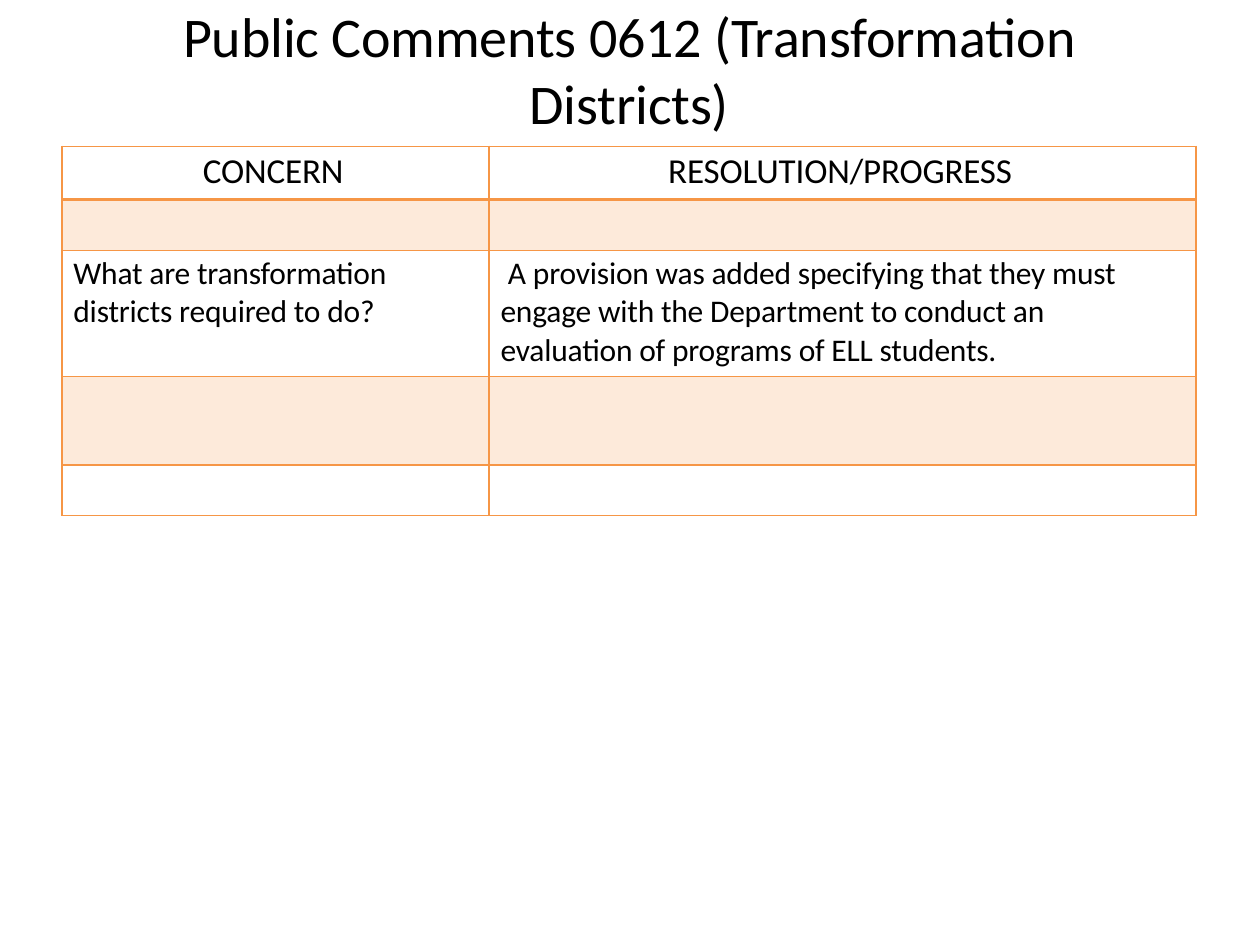
from lxml import etree
from pptx import Presentation
from pptx import util as u
from pptx.dml.color import RGBColor
from pptx.enum import text
from pptx.oxml import ns

HUES = {"ink": "000000", "line": "F69646", "band": "FDEADA"}
COLS = [8.61, 14.25]
ROWS = [1.08, 1.02, 2.54, 1.78, 1.02]
BANDS = {1, 3}
HEAD = {"size": 20, "before": 1.8}
BODY = {"size": 18, "before": 1.9}
CELLS = {
    (0, 0): ("CONCERN", 2.84, 0, HEAD),
    (0, 1): ("RESOLUTION/PROGRESS", 3.61, 0, HEAD),
    (2, 0): ("What are transformation districts required to do?", 0.23, 0, BODY),
    (2, 1): (
        "A provision was added specifying that they must engage with the "
        "Department to conduct an evaluation of programs of ELL students.",
        0.23, 0.15, BODY),
}


def apply(item, opts):
    for key, val in opts.items():
        setattr(item, key, val)


def write(para, words, size):
    run = para.add_run()
    run.text = words
    apply(run.font, {"name": "Calibri", "size": u.Pt(size), "bold": False})
    run.font.color.rgb = RGBColor.from_string(HUES["ink"])
    run.font._element.set("spc", "-10")


def add_title(slide, words):
    title = slide.shapes.title
    apply(title, {"left": u.Cm(2.74), "top": u.Cm(0.03),
                  "width": u.Cm(19.89), "height": u.Cm(4.11)})
    frame = title.text_frame
    apply(frame, {"margin_left": 0, "margin_right": 0, "margin_top": 0,
                  "margin_bottom": 0, "word_wrap": True,
                  "auto_size": text.MSO_AUTO_SIZE.NONE,
                  "vertical_anchor": text.MSO_ANCHOR.TOP})
    para = frame.paragraphs[0]
    para.alignment = text.PP_ALIGN.CENTER
    write(para, words, 32)


def add_edge(cell, side, width):
    props = cell._tc.get_or_add_tcPr()
    line = etree.SubElement(props, ns.qn(f"a:ln{side}"), w=str(u.Pt(width)))
    fill = etree.SubElement(line, ns.qn("a:solidFill"))
    etree.SubElement(fill, ns.qn("a:srgbClr"), val=HUES["line"])


def style_cell(cell, row):
    apply(cell, {"margin_left": 0, "margin_right": u.Cm(1.2),
                 "margin_top": u.Cm(0.08), "margin_bottom": 0})
    widths = {"L": 1, "R": 1, "T": 2 if row == 1 else 1, "B": 2 if row == 0 else 1}
    for side, width in widths.items():
        add_edge(cell, side, width)
    if row in BANDS:
        cell.fill.solid()
        cell.fill.fore_color.rgb = RGBColor.from_string(HUES["band"])
    else:
        cell.fill.background()


def fill_cell(cell, words, left, first, kind):
    para = cell.text_frame.paragraphs[0]
    apply(para, {"space_before": u.Pt(kind["before"]),
                 "alignment": text.PP_ALIGN.LEFT})
    props = para._p.get_or_add_pPr()
    props.set("marL", str(u.Cm(left)))
    props.set("indent", str(u.Cm(first)))
    write(para, words, kind["size"])


def add_grid(slide):
    frame = slide.shapes.add_table(
        len(ROWS), len(COLS), u.Cm(1.25), u.Cm(2.95),
        u.Cm(sum(COLS)), u.Cm(sum(ROWS)))
    grid = frame.table
    apply(grid, {"first_row": False, "horz_banding": False})
    for col, width in zip(grid.columns, COLS):
        col.width = u.Cm(width)
    for row, height in enumerate(ROWS):
        grid.rows[row].height = u.Cm(height)
        for col in range(len(COLS)):
            cell = grid.cell(row, col)
            style_cell(cell, row)
            if (row, col) in CELLS:
                fill_cell(cell, *CELLS[row, col])


def main():
    deck = Presentation()
    apply(deck, {"slide_width": u.Cm(25.4), "slide_height": u.Cm(19.05)})
    slide = deck.slides.add_slide(deck.slide_layouts[5])
    add_grid(slide)
    add_title(slide, "Public Comments 0612 (Transformation Districts)")
    deck.save("out.pptx")


if __name__ == "__main__":
    main()
